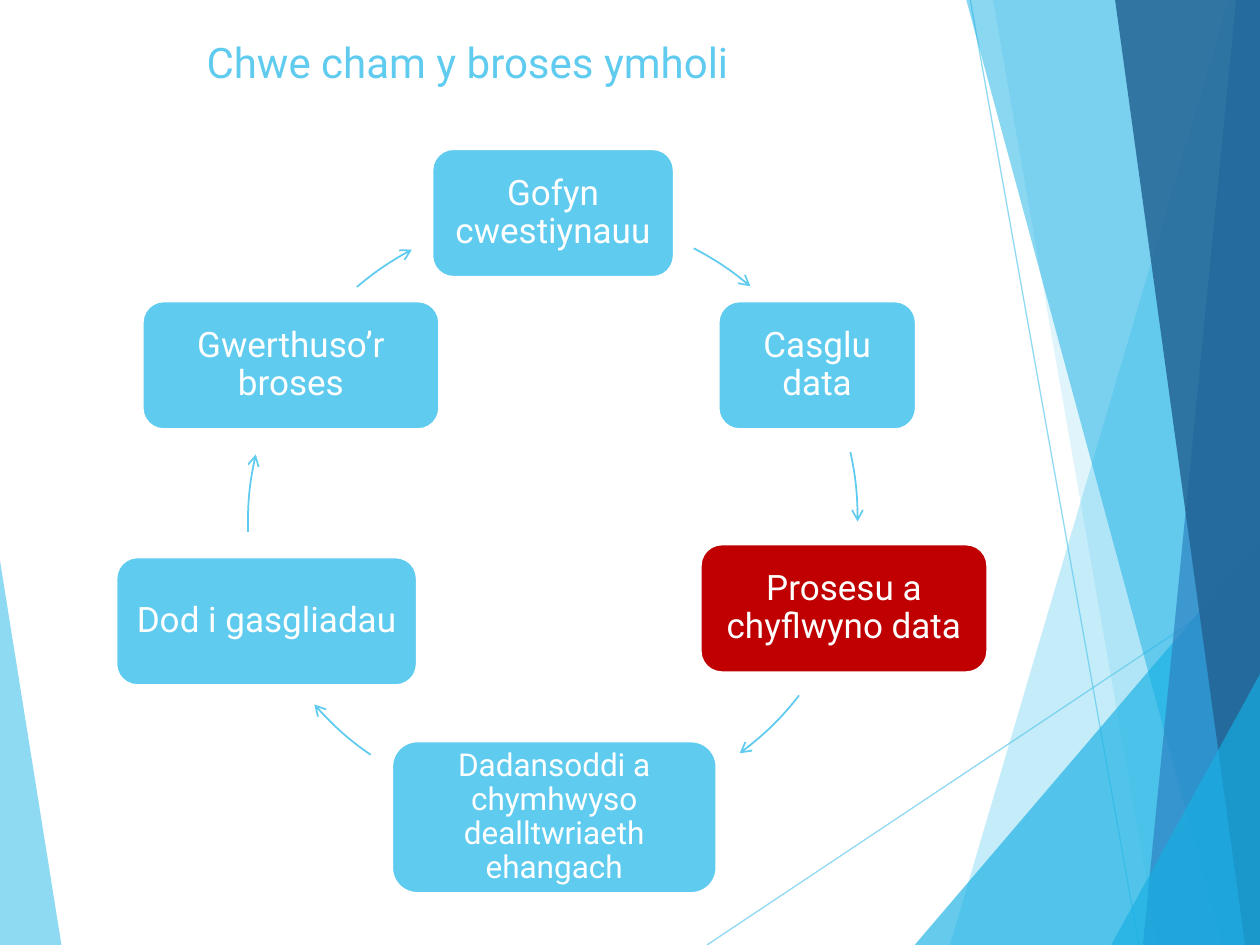
from dataclasses import dataclass

from lxml.etree import SubElement
from pptx import Presentation
from pptx.dml.color import RGBColor
from pptx.enum.shapes import MSO_CONNECTOR, MSO_SHAPE
from pptx.enum.text import MSO_ANCHOR, MSO_AUTO_SIZE, PP_ALIGN
from pptx.oxml.ns import qn
from pptx.util import Cm, Pt


@dataclass(frozen=True)
class Theme:
    font: str = "Roboto"
    sky: str = "5FCBEF"
    cyan: str = "17B0E4"
    blue: str = "2E83C3"
    navy: str = "226292"
    red: str = "C00000"
    white: str = "FFFFFF"
    title_size: int = 24
    step_size: int = 20
    small_size: int = 18


THEME = Theme()
WIDTH, HEIGHT = 25.4, 19.05
STEP_HEIGHT = 2.59
CYCLE_DIAMETER = 12.24

# Facets: start, end, colour, opacity in percent; each is filled to the right edge
FACETS = [
    ((24.77, 0), (19.15, HEIGHT), THEME.sky, 36),
    ((20.02, 0), (23.34, HEIGHT), THEME.sky, 20),
    ((WIDTH, 10.9), (18.44, HEIGHT), THEME.cyan, 66),
    ((19.48, 0), (24.64, HEIGHT), THEME.cyan, 50),
    ((24.92, 0), (23.04, HEIGHT), THEME.blue, 70),
    ((22.48, 0), (25.1, HEIGHT), THEME.navy, 82),
    ((WIDTH, 13.59), (22.4, HEIGHT), THEME.cyan, 66),
]

# Steps: text, left, top, width, height, colour, type size
STEPS = [
    ("Gofyn cwestiynauu", 8.71, 3, 4.88, STEP_HEIGHT, THEME.sky, THEME.step_size),
    ("Casglu data", 14.48, 6.07, 3.99, STEP_HEIGHT, THEME.sky, THEME.step_size),
    ("Prosesu a chyflwyno data", 14.12, 10.97, 5.79, STEP_HEIGHT, THEME.red, THEME.step_size),
    ("Dadansoddi a chymhwyso dealltwriaeth ehangach",
     7.9, 14.94, 6.55, 3.07, THEME.sky, THEME.small_size),
    ("Dod i gasgliadau", 2.34, 11.23, 6.07, STEP_HEIGHT, THEME.sky, THEME.step_size),
    ("Gwerthuso’r broses", 2.87, 6.07, 5.99, STEP_HEIGHT, THEME.sky, THEME.step_size),
]

# Arrows: left and top of the circle, start and end angle clockwise from the right
ARROWS = [
    (5.05, 4.32, 297.4, 310.3),
    (5.05, 4.32, 347.5, 0.7),
    (5.16, 4.14, 37.9, 53.6),
    (4.83, 4.06, 124.6, 138.9),
    (5, 4.42, 178.3, 193),
    (5.05, 4.32, 229.5, 242.1),
]


def set_opacity(fill_format, percent):
    """Set the opacity of a fill that already has an RGB colour."""
    colour = fill_format._xPr.find(f"{qn('a:solidFill')}/{qn('a:srgbClr')}")
    SubElement(colour, qn("a:alpha"), val=str(percent * 1000))


def format_text(paragraph, size, colour, alignment):
    paragraph.alignment = alignment
    for run in paragraph.runs:
        run.font.name = THEME.font
        run.font.size = Pt(size)
        run.font.color.rgb = RGBColor.from_string(colour)


def add_facet(slide, points, colour, opacity):
    (first, *rest) = [(Cm(x), Cm(y)) for x, y in points]
    builder = slide.shapes.build_freeform(*first)
    builder.add_line_segments(rest, close=True)
    shape = builder.convert_to_shape()
    shape.shadow.inherit = False
    shape.line.fill.background()
    shape.fill.solid()
    shape.fill.fore_color.rgb = RGBColor.from_string(colour)
    set_opacity(shape.fill, opacity)


def add_thin_line(slide, start, end):
    ends = [Cm(value) for value in (*start, *end)]
    connector = slide.shapes.add_connector(MSO_CONNECTOR.STRAIGHT, *ends)
    connector.line.color.rgb = RGBColor.from_string(THEME.sky)
    connector.line.width = Pt(0.75)
    set_opacity(connector.line.fill, 70)
    SubElement(connector._element.spPr, qn("a:effectLst"))


def add_step(slide, text, left, top, width, height, colour, size):
    shape = slide.shapes.add_shape(
        MSO_SHAPE.ROUNDED_RECTANGLE, Cm(left), Cm(top), Cm(width), Cm(height))
    shape.shadow.inherit = False
    shape.fill.solid()
    shape.fill.fore_color.rgb = RGBColor.from_string(colour)
    shape.line.color.rgb = RGBColor.from_string(THEME.white)
    shape.line.width = Pt(1.5)
    frame = shape.text_frame
    frame.word_wrap = True
    frame.vertical_anchor = MSO_ANCHOR.MIDDLE
    frame.margin_left = frame.margin_right = Cm(0.2)
    frame.margin_top = frame.margin_bottom = Cm(0)
    frame.text = text
    paragraph = frame.paragraphs[0]
    paragraph.line_spacing = 0.9
    format_text(paragraph, size, THEME.white, PP_ALIGN.CENTER)


def add_arc_arrow(slide, left, top, start_angle, end_angle):
    shape = slide.shapes.add_shape(
        MSO_SHAPE.ARC, Cm(left), Cm(top), Cm(CYCLE_DIAMETER), Cm(CYCLE_DIAMETER))
    # Angles are stored in 1/60000 degree, adjustments are scaled by 100000
    for index, angle in enumerate((start_angle, end_angle)):
        shape.adjustments[index] = angle * 0.6
    shape.shadow.inherit = False
    shape.fill.background()
    shape.line.color.rgb = RGBColor.from_string(THEME.sky)
    shape.line.width = Pt(1)
    SubElement(shape.line._get_or_add_ln(), qn("a:tailEnd"), type="arrow")


def set_title(slide, text):
    title = slide.shapes.title
    title.left, title.top, title.width, title.height = Cm(3.91), Cm(0.61), Cm(17.63), Cm(3.66)
    frame = title.text_frame
    frame.text = text
    frame.auto_size = MSO_AUTO_SIZE.NONE
    frame.vertical_anchor = MSO_ANCHOR.TOP
    format_text(frame.paragraphs[0], THEME.title_size, THEME.sky, PP_ALIGN.LEFT)


def main():
    presentation = Presentation()
    presentation.slide_width, presentation.slide_height = Cm(WIDTH), Cm(HEIGHT)
    slide = presentation.slides.add_slide(presentation.slide_layouts[5])
    set_title(slide, "Chwe cham y broses ymholi")

    # Background decoration
    add_facet(slide, [(0, 11.3), (1.24, HEIGHT), (0, HEIGHT)], THEME.sky, 70)
    add_thin_line(slide, (14.25, HEIGHT), (WIDTH, 11.62))
    add_thin_line(slide, (19.56, 0), (22.96, HEIGHT))
    for start, end, colour, opacity in FACETS:
        corners = [(WIDTH, HEIGHT), (WIDTH, start[1])]
        add_facet(slide, [start, end, *corners], colour, opacity)

    # Cycle of six steps
    for step, arrow in zip(STEPS, ARROWS):
        add_step(slide, *step)
        add_arc_arrow(slide, *arrow)

    presentation.save("out.pptx")


if __name__ == "__main__":
    main()
